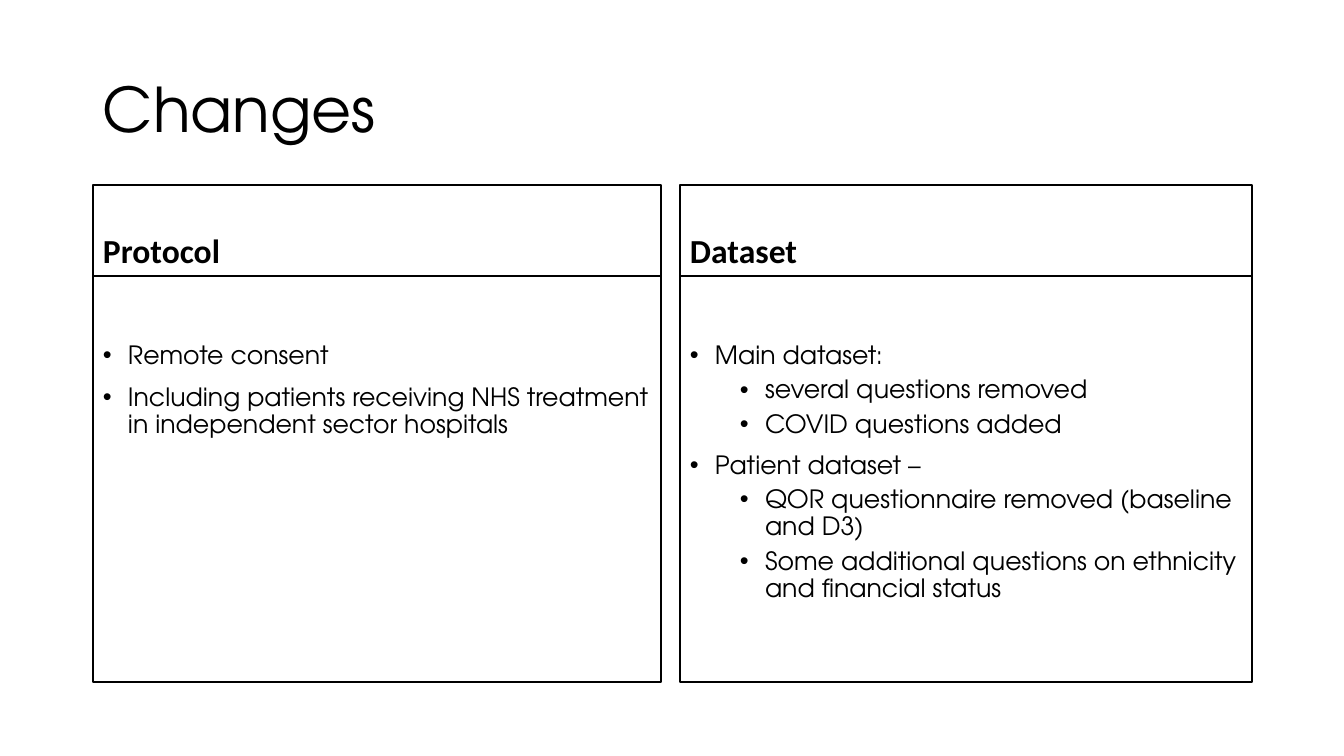
from lxml.etree import SubElement
from pptx import Presentation
from pptx.dml.color import RGBColor
from pptx.enum.shapes import MSO_SHAPE as Preset
from pptx.enum.text import MSO_ANCHOR as Anchor, PP_ALIGN as Align
from pptx.oxml.ns import qn
from pptx.util import Pt

EMU_PER_PX = 914400 / 100.8
BLACK, WHITE = "000000", "FFFFFF"
BODY_FONT, HEADING_FONT = "TeX Gyre Adventor", "Calibri"
PANEL_TOP, HEADING_HEIGHT, BODY_HEIGHT = 185, 91, 406
INDENT, LEVEL_STEP = 25, 50

# Left edge, width, heading, and bullets as (level, text)
PANELS = [
    (93, 568, "Protocol", [
        (0, "Remote consent"),
        (0, "Including patients receiving NHS treatment in independent sector hospitals"),
    ]),
    (680, 572, "Dataset", [
        (0, "Main dataset:"),
        (1, "several questions removed"),
        (1, "COVID questions added"),
        (0, "Patient dataset –"),
        (1, "QOR questionnaire removed (baseline and D3)"),
        (1, "Some additional questions on ethnicity and financial status"),
    ]),
]


def px(length):
    return round(length * EMU_PER_PX)


def color(hex_value):
    return RGBColor.from_string(hex_value)


def set_frame(text_frame, anchor, top_inset=5):
    text_frame.word_wrap = True
    text_frame.vertical_anchor = anchor
    text_frame.margin_left = text_frame.margin_right = px(10)
    text_frame.margin_top, text_frame.margin_bottom = px(top_inset), px(5)


def write(paragraph, text, font_name, size, bold=False):
    paragraph.text = text
    paragraph.alignment = Align.LEFT
    paragraph.line_spacing = 0.9
    for run in paragraph.runs:
        run.font.name = font_name
        run.font.size = Pt(size)
        run.font.bold = bold
        run.font.color.rgb = color(BLACK)


def add_bullet(paragraph, level):
    paragraph.level = level
    properties = paragraph._p.get_or_add_pPr()
    properties.set("marL", str(px(INDENT + level * LEVEL_STEP)))
    properties.set("indent", str(-px(INDENT)))
    SubElement(properties, qn("a:buFont")).set("typeface", "Arial")
    SubElement(properties, qn("a:buChar")).set("char", "•")


def add_title(slide, text):
    box = slide.shapes.add_textbox(px(93), px(40), px(1159), px(146))
    set_frame(box.text_frame, Anchor.MIDDLE)
    write(box.text_frame.paragraphs[0], text, BODY_FONT, 44)


def add_box(slide, left, top, width, height):
    shape = slide.shapes.add_shape(Preset.RECTANGLE, px(left), px(top), px(width), px(height))
    shape.shadow.inherit = False
    shape.fill.solid()
    shape.fill.fore_color.rgb = color(WHITE)
    shape.line.color.rgb = color(BLACK)
    shape.line.width = Pt(1)
    return shape


def add_panel(slide, left, width, heading, bullets):
    # Heading
    heading_frame = add_box(slide, left, PANEL_TOP, width, HEADING_HEIGHT).text_frame
    set_frame(heading_frame, Anchor.BOTTOM)
    write(heading_frame.paragraphs[0], heading, HEADING_FONT, 24, bold=True)

    # Bulleted body, set well below the heading
    body = add_box(slide, left, PANEL_TOP + HEADING_HEIGHT, width, BODY_HEIGHT)
    body_frame = body.text_frame
    set_frame(body_frame, Anchor.TOP, top_inset=67)
    for index, (level, text) in enumerate(bullets):
        paragraph = body_frame.add_paragraph() if index else body_frame.paragraphs[0]
        write(paragraph, text, BODY_FONT, 18)
        if index:
            paragraph.space_before = Pt(5 if level else 10)
        add_bullet(paragraph, level)


def main():
    presentation = Presentation()
    presentation.slide_width, presentation.slide_height = px(1344), px(756)
    slide = presentation.slides.add_slide(presentation.slide_layouts[6])
    add_title(slide, "Changes")
    for panel in PANELS:
        add_panel(slide, *panel)
    presentation.save("out.pptx")


if __name__ == "__main__":
    main()
